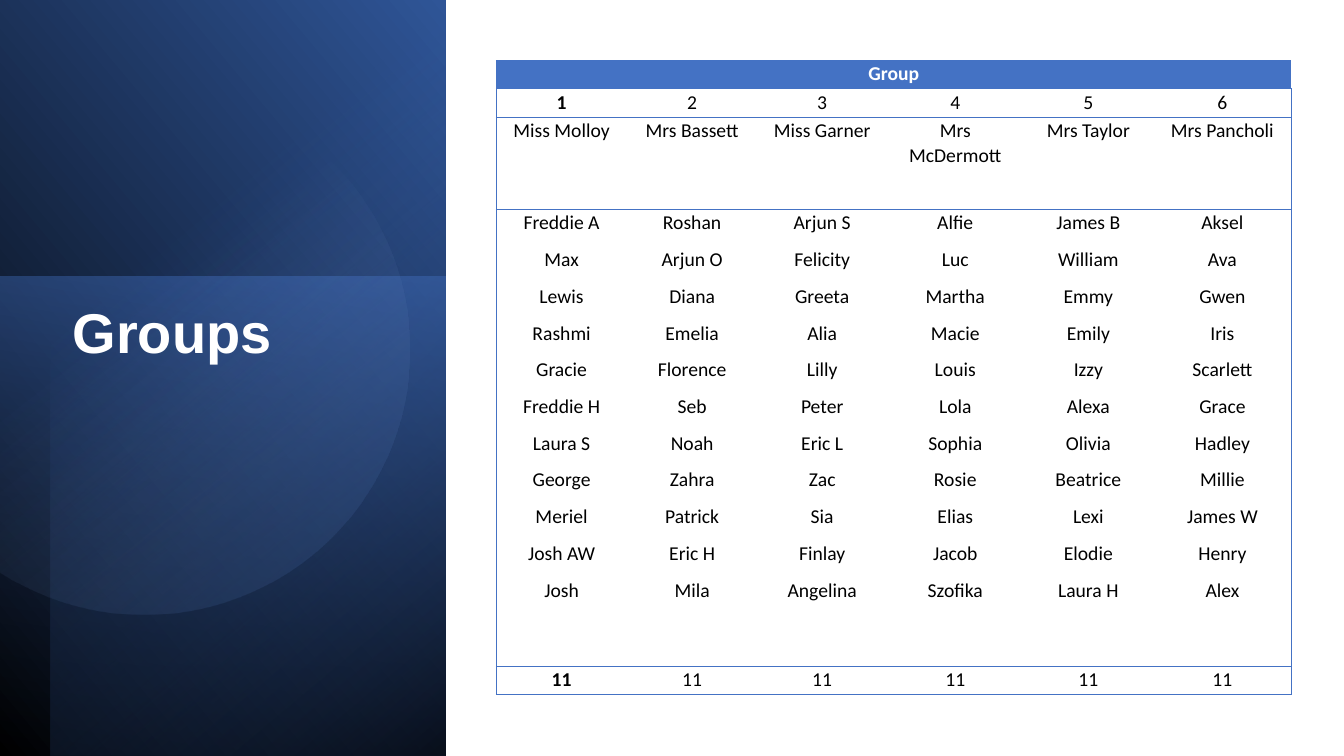
from math import cos, radians, sin

from pptx import Presentation
from pptx.dml.color import RGBColor
from pptx.enum.shapes import MSO_SHAPE
from pptx.enum.text import MSO_ANCHOR, PP_ALIGN
from pptx.oxml import parse_xml
from pptx.oxml.ns import nsdecls, qn
from pptx.util import Inches, Pt

RECT = MSO_SHAPE.RECTANGLE
TOP = MSO_ANCHOR.TOP
CENTER = PP_ALIGN.CENTER
LEFT = PP_ALIGN.LEFT
PLAIN = "{2D5ABB26-0587-4C30-8999-92F81FD0307C}"

COLORS = {
    "white": "FFFFFF", "black": "000000", "blue": "4472C4",
    "deep": "2F5597", "navy": "203864", "pale": "8FAADC",
}
COLS = [1.3, 1.29, 1.29, 1.35, 1.29, 1.37]
ROWS = [0.28, 0.28, 0.92, 4.53, 0.28]
STAFF = ["Miss Molloy", "Mrs Bassett", "Miss Garner",
         "Mrs McDermott", "Mrs Taylor", "Mrs Pancholi"]
GROUPS = [
    ["Freddie A", "Max", "Lewis", "Rashmi", "Gracie", "Freddie H",
     "Laura S", "George", "Meriel", "Josh AW", "Josh"],
    ["Roshan", "Arjun O", "Diana", "Emelia", "Florence", "Seb",
     "Noah", "Zahra", "Patrick", "Eric H", "Mila"],
    ["Arjun S", "Felicity", "Greeta", "Alia", "Lilly", "Peter",
     "Eric L", "Zac", "Sia", "Finlay", "Angelina"],
    ["Alfie", "Luc", "Martha", "Macie", "Louis", "Lola",
     "Sophia", "Rosie", "Elias", "Jacob", "Szofika"],
    ["James B", "William", "Emmy", "Emily", "Izzy", "Alexa",
     "Olivia", "Beatrice", "Lexi", "Elodie", "Laura H"],
    ["Aksel", "Ava", "Gwen", "Iris", "Scarlett", "Grace",
     "Hadley", "Millie", "James W", "Henry", "Alex"],
]


def rgb(name):
    """Return the named colour."""
    return RGBColor.from_string(COLORS[name])


def add_run(para, text, font, size, color, bold):
    """Add one formatted run to a paragraph."""
    run = para.add_run()
    run.text = text
    run.font.name = font
    run.font.size = Pt(size)
    run.font.bold = bold
    run.font.color.rgb = rgb(color)


def shade(shape, stops, angle):
    """Give a shape a linear gradient of (place, colour, opacity) stops."""
    shape.shadow.inherit = False
    shape.line.fill.background()
    shape.fill.background()
    marks = "".join(
        f'<a:gs pos="{place * 1000}"><a:srgbClr val="{COLORS[name]}">'
        f'<a:alpha val="{alpha * 1000}"/></a:srgbClr></a:gs>'
        for place, name, alpha in stops)
    grad = parse_xml(
        f'<a:gradFill {nsdecls("a")} rotWithShape="1"><a:gsLst>{marks}</a:gsLst>'
        f'<a:lin ang="{round(angle * 60000)}" scaled="0"/></a:gradFill>')
    props = shape.element.spPr
    props.replace(props.find(qn("a:noFill")), grad)


def add_panel(slide, box, turn, flip, stops, angle):
    """Add a turned gradient rectangle."""
    panel = slide.shapes.add_shape(RECT, *map(Inches, box))
    panel.rotation = turn
    if flip:
        panel.element.spPr.xfrm.set("flipH", "1")
    shade(panel, stops, angle)


def add_disc(slide, x, y, radius, sweep, stops, angle):
    """Add a gradient disc cut off by a straight left edge."""
    points = [(Inches(x + radius * cos(radians(turn))),
               Inches(y + radius * sin(radians(turn))))
              for turn in range(-sweep, sweep + 1, 3)]
    path = slide.shapes.build_freeform(*points[0])
    path.add_line_segments(points[1:], close=True)
    shade(path.convert_to_shape(), stops, angle)


def set_title(slide, text, box):
    """Place the title in front of the panels and fill it."""
    title = slide.shapes.title
    title.element.getparent().append(title.element)
    title.left, title.top, title.width, title.height = map(Inches, box)
    frame = title.text_frame
    frame.word_wrap = True
    frame.vertical_anchor = TOP
    frame.margin_left = frame.margin_top = 0
    frame.margin_right, frame.margin_bottom = Inches(0.1), Inches(0.05)
    para = frame.paragraphs[0]
    para.alignment = LEFT
    para.line_spacing = 0.9
    add_run(para, text, "Arial", 40, "white", True)


def rule(cell, sides):
    """Draw thin blue borders on the given sides of a cell."""
    props = cell._tc.get_or_add_tcPr()
    for side in sides:
        props.append(parse_xml(
            f'<a:ln{side} {nsdecls("a")} w="6350"><a:solidFill>'
            f'<a:srgbClr val="{COLORS["blue"]}"/></a:solidFill></a:ln{side}>'))


def fill_cell(cell, lines, color, bold):
    """Write centred lines in a cell."""
    cell.margin_left = cell.margin_right = Inches(0.09)
    cell.margin_top = cell.margin_bottom = 0
    frame = cell.text_frame
    for i, line in enumerate(lines):
        para = frame.add_paragraph() if i else frame.paragraphs[0]
        para.alignment = CENTER
        para.line_spacing = 1.07
        para.space_after = Pt(8)
        add_run(para, line, "Calibri", 14, color, bold)


def add_groups(slide, box):
    """Add the table of groups."""
    table = slide.shapes.add_table(len(ROWS), len(COLS), *map(Inches, box)).table
    table.first_row = table.horz_banding = False
    table._tbl.tblPr.find(qn("a:tableStyleId")).text = PLAIN
    for col, width in zip(table.columns, COLS):
        col.width = Inches(width)
    for row, height in zip(table.rows, ROWS):
        row.height = Inches(height)
    table.cell(0, 0).merge(table.cell(0, len(COLS) - 1))
    body = [[["Group"]],
            [[str(i + 1)] for i in range(len(GROUPS))],
            [[name] for name in STAFF],
            GROUPS,
            [[str(len(group))] for group in GROUPS]]
    for r in range(len(ROWS)):
        for c in range(len(COLS)):
            cell = table.cell(r, c)
            sides = ["L"] * (c == 0) + ["R"] * (c == len(COLS) - 1)
            rule(cell, sides + ["T", "B"])
            if r == 0:
                cell.fill.solid()
                cell.fill.fore_color.rgb = rgb("blue")
            else:
                cell.fill.background()
            if c < len(body[r]):
                bold = r == 0 or (c == 0 and r in (1, 4))
                fill_cell(cell, body[r][c], "black" if r else "white", bold)


def main():
    """Build the slide and save it."""
    deck = Presentation()
    deck.slide_width, deck.slide_height = Inches(13.33), Inches(7.5)
    slide = deck.slides.add_slide(deck.slide_layouts[5])
    add_panel(slide, (-1.55, 1.55, 7.52, 4.42), 90, True,
              [(0, "black", 100), (100, "deep", 100)], 310)
    add_panel(slide, (-0.17, 2.91, 4.76, 4.42), 270, False,
              [(0, "blue", 50), (100, "navy", 0)], 190)
    add_panel(slide, (-1.29, 1.79, 7.5, 3.92), 270, True,
              [(0, "black", 59), (69, "blue", 0)], 220)
    add_disc(slide, 1.43, 3.47, 2.63, 123,
             [(39, "pale", 0), (100, "deep", 26)], 51.6)
    set_title(slide, "Groups", (0.72, 3.03, 3.15, 3.36))
    add_groups(slide, (4.92, 0.6, 7.9, 6.3))
    deck.save("out.pptx")


if __name__ == "__main__":
    main()
